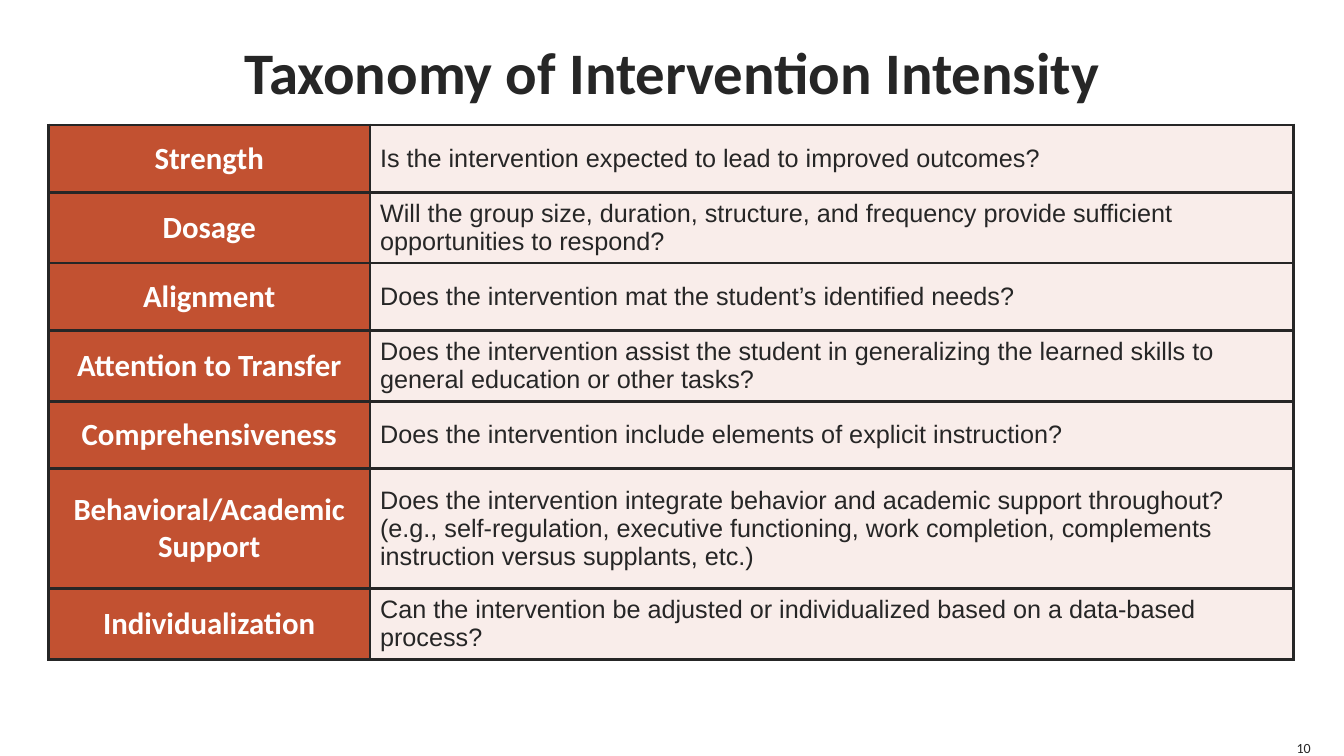
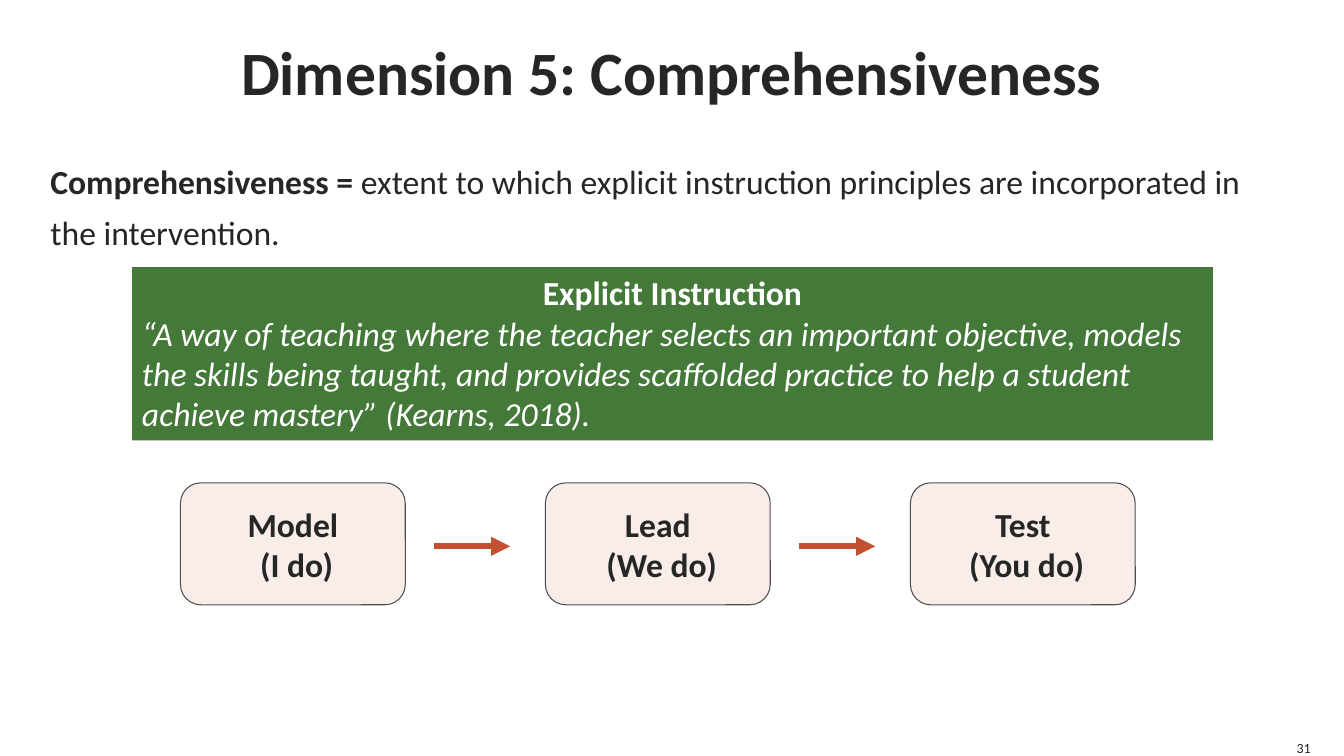
from lxml import etree
from pptx import Presentation
from pptx.dml.color import RGBColor
from pptx.enum.shapes import MSO_CONNECTOR, MSO_SHAPE
from pptx.enum.text import MSO_ANCHOR, PP_ALIGN
from pptx.oxml.ns import qn
from pptx.util import Pt

EMU_PER_PX = 9144  # 100 px to the inch

INK = RGBColor(0x26, 0x26, 0x26)
WHITE = RGBColor(0xFF, 0xFF, 0xFF)
RUST = RGBColor(0xC2, 0x51, 0x31)
BLUSH = RGBColor(0xF9, 0xED, 0xEA)
GREEN = RGBColor(0x44, 0x79, 0x39)
OUTLINE = RGBColor(0x4D, 0x4D, 0x4F)

HEADING_FONT = "Calibri"
TABLE_FONT = "Arial"

LEFT, CENTER, RIGHT = PP_ALIGN.LEFT, PP_ALIGN.CENTER, PP_ALIGN.RIGHT
TOP, MIDDLE, BOTTOM = MSO_ANCHOR.TOP, MSO_ANCHOR.MIDDLE, MSO_ANCHOR.BOTTOM
RECTANGLE, ROUNDED = MSO_SHAPE.RECTANGLE, MSO_SHAPE.ROUNDED_RECTANGLE
STRAIGHT = MSO_CONNECTOR.STRAIGHT

# Content
TAXONOMY = [
    ("Strength", "Is the intervention expected to lead to improved outcomes?"),
    ("Dosage", "Will the group size, duration, structure, and frequency provide "
               "sufficient opportunities to respond?"),
    ("Alignment", "Does the intervention mat the student’s identified needs?"),
    ("Attention to Transfer", "Does the intervention assist the student in generalizing "
                              "the learned skills to general education or other tasks?"),
    ("Comprehensiveness", "Does the intervention include elements of explicit instruction?"),
    ("Behavioral/Academic Support",
     "Does the intervention integrate behavior and academic support throughout? "
     "(e.g., self-regulation, executive functioning, work completion, complements "
     "instruction versus supplants, etc.)"),
    ("Individualization", "Can the intervention be adjusted or individualized based on "
                          "a data-based process?"),
]
COLUMN_WIDTHS = (319, 916)
ROW_HEIGHT, TALL_ROW_HEIGHT, TALL_ROW = 67, 119, 5

TERM = "Comprehensiveness = "
DEFINITION = ("extent to which explicit instruction principles are incorporated in "
              "the intervention.")
QUOTE_TITLE = "Explicit Instruction"
QUOTE = ("“A way of teaching where the teacher selects an important objective, models "
         "the skills being taught, and provides scaffolded practice to help a student "
         "achieve mastery” (Kearns, 2018).")
STEPS = [("Model", " (I do)"), ("Lead", " (We do)"), ("Test", " (You do)")]
STEP_LEFT, STEP_TOP, STEP_WIDTH, STEP_HEIGHT, STEP_PITCH = 179, 479, 223, 121, 362
ARROW_GAP, ARROW_LENGTH, ARROW_Y = 28, 76, 542


def px(*lengths):
    return [length * EMU_PER_PX for length in lengths]


def add_run(paragraph, text, size, color=INK, bold=False, italic=False, font=HEADING_FONT):
    run = paragraph.add_run()
    run.text = text
    run.font.name = font
    run.font.size = Pt(size)
    run.font.bold = bold
    run.font.italic = italic
    run.font.color.rgb = color


def add_text_box(slide, box, anchor, alignment, wrap=True):
    """Add a text box without insets and return its first paragraph."""
    frame = slide.shapes.add_textbox(*px(*box)).text_frame
    frame.word_wrap = wrap
    frame.vertical_anchor = anchor
    frame.margin_left = frame.margin_right = frame.margin_top = frame.margin_bottom = 0
    frame.paragraphs[0].alignment = alignment
    return frame.paragraphs[0]


def add_box(slide, kind, box, fill, anchor, line=None):
    """Add a filled shape and return its text frame."""
    shape = slide.shapes.add_shape(kind, *px(*box))
    shape.shadow.inherit = False
    shape.fill.solid()
    shape.fill.fore_color.rgb = fill
    if line is None:
        shape.line.fill.background()
    else:
        shape.line.color.rgb = line
        shape.line.width = Pt(0.75)
    shape.text_frame.word_wrap = True
    shape.text_frame.vertical_anchor = anchor
    return shape.text_frame


def add_arrow(slide, left, right, y):
    arrow = slide.shapes.add_connector(STRAIGHT, *px(left, y, right, y))
    arrow.line.color.rgb = RUST
    arrow.line.width = Pt(4.5)
    etree.SubElement(arrow.line._get_or_add_ln(), qn("a:tailEnd"), type="triangle")
    etree.SubElement(arrow._element.spPr, qn("a:effectLst"))


def add_borders(cell, color, width):
    properties = cell._tc.get_or_add_tcPr()
    for index, side in enumerate(("lnL", "lnR", "lnT", "lnB")):
        border = etree.Element(qn(f"a:{side}"), w=str(int(Pt(width))))
        fill = etree.SubElement(border, qn("a:solidFill"))
        etree.SubElement(fill, qn("a:srgbClr"), val=str(color))
        properties.insert(index, border)


def add_slide(presentation, title, title_size, number):
    """Add a blank slide with the shared title and page number."""
    slide = presentation.slides.add_slide(presentation.slide_layouts[6])
    add_run(add_text_box(slide, (50, 0, 1233, 140), MIDDLE, CENTER),
            title, title_size, bold=True)
    add_run(add_text_box(slide, (1283, 733, 17, 17), BOTTOM, RIGHT, wrap=False), number, 10)
    return slide


def build_taxonomy(presentation):
    slide = add_slide(presentation, "Taxonomy of Intervention Intensity", 42, "10")
    heights = [TALL_ROW_HEIGHT if index == TALL_ROW else ROW_HEIGHT
               for index in range(len(TAXONOMY))]
    table = slide.shapes.add_table(
        len(TAXONOMY), 2, *px(48, 124, sum(COLUMN_WIDTHS), sum(heights))).table
    table.first_row = table.horz_banding = False
    for column, width in zip(table.columns, px(*COLUMN_WIDTHS)):
        column.width = width
    for row, height, texts in zip(table.rows, px(*heights), TAXONOMY):
        row.height = height
        label, question = row.cells
        for cell, fill in ((label, RUST), (question, BLUSH)):
            cell.vertical_anchor = MIDDLE
            cell.fill.solid()
            cell.fill.fore_color.rgb = fill
            add_borders(cell, INK, 2.25)
        label_paragraph = label.text_frame.paragraphs[0]
        label_paragraph.alignment = CENTER
        add_run(label_paragraph, texts[0], 22, WHITE, bold=True)
        add_run(question.text_frame.paragraphs[0], texts[1], 18, font=TABLE_FONT)


def build_comprehensiveness(presentation):
    slide = add_slide(presentation, "Dimension 5: Comprehensiveness", 44, "31")

    # Definition
    paragraph = add_text_box(slide, (50, 150, 1233, 110), TOP, LEFT)
    paragraph.line_spacing = 1.25
    add_run(paragraph, TERM, 24, bold=True)
    add_run(paragraph, DEFINITION, 24)

    # Quotation
    frame = add_box(slide, RECTANGLE, (131, 265, 1072, 172), GREEN, TOP)
    heading, quote = frame.paragraphs[0], frame.add_paragraph()
    heading.alignment, quote.alignment = CENTER, LEFT
    add_run(heading, QUOTE_TITLE, 24, WHITE, bold=True)
    add_run(quote, QUOTE, 24, WHITE, italic=True)

    # Steps, with an arrow in each gap
    for index, (step, actor) in enumerate(STEPS):
        left = STEP_LEFT + index * STEP_PITCH
        frame = add_box(slide, ROUNDED, (left, STEP_TOP, STEP_WIDTH, STEP_HEIGHT),
                        BLUSH, MIDDLE, OUTLINE)
        paragraph = frame.paragraphs[0]
        paragraph.alignment = CENTER
        add_run(paragraph, step, 24, bold=True)
        paragraph.add_line_break()
        add_run(paragraph, actor, 24, bold=True)
        if index < len(STEPS) - 1:
            start = left + STEP_WIDTH + ARROW_GAP
            add_arrow(slide, start, start + ARROW_LENGTH, ARROW_Y)


def main():
    presentation = Presentation()
    presentation.slide_width, presentation.slide_height = px(1333, 750)
    build_taxonomy(presentation)
    build_comprehensiveness(presentation)
    presentation.save("out.pptx")


if __name__ == "__main__":
    main()
